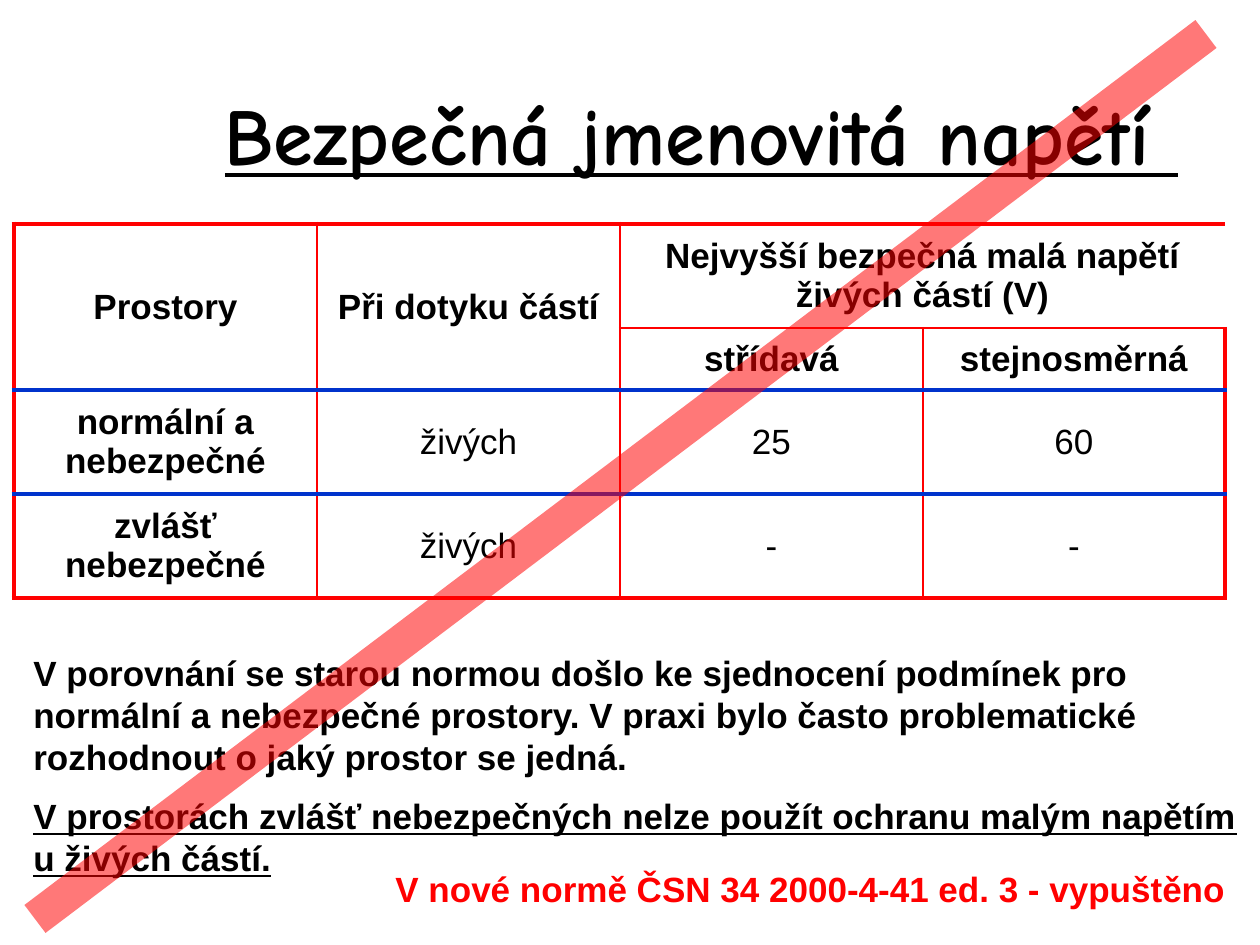
from lxml import etree
from pptx import Presentation
from pptx import util as u
from pptx.dml.color import RGBColor
from pptx.enum import shapes, text
from pptx.oxml import ns

BLACK = RGBColor(0x00, 0x00, 0x00)
WHITE = RGBColor(0xFF, 0xFF, 0xFF)
RED = RGBColor(0xFF, 0x00, 0x00)
BLUE = RGBColor(0x00, 0x33, 0xCC)

SCALE = u.Inches(1) / 126
ROWS = (99, 58, 99, 99)
COLS = (303, 303, 303, 302)
CELLS = (
    ("Prostory", "Při dotyku částí", "Nejvyšší bezpečná malá napětí živých částí (V)", None),
    (None, None, "střídavá", "stejnosměrná"),
    ("normální a nebezpečné", "živých", "25", "60"),
    ("zvlášť nebezpečné", "živých", "-", "-"),
)
NOTE = (
    "V porovnání se starou normou došlo ke sjednocení podmínek pro normální a "
    "nebezpečné prostory. V praxi bylo často problematické rozhodnout o jaký prostor se jedná."
)
BAN = "V prostorách zvlášť nebezpečných nelze použít ochranu malým napětím u živých částí."


def px(*vals):
    return [u.Emu(round(val * SCALE)) for val in vals]


def write(para, words, size=20, font="Arial", color=BLACK, bold=True,
          under=False, align=text.PP_ALIGN.LEFT, lead=None, before=0):
    para.alignment = align
    para.space_before = u.Pt(before)
    if lead:
        para.line_spacing = u.Pt(lead)
    run = para.add_run()
    run.text = words
    run.font.size = u.Pt(size)
    run.font.name = font
    run.font.color.rgb = color
    run.font.bold = bold
    run.font.underline = under


def add_box(slide, box, anchor=text.MSO_ANCHOR.TOP):
    frame = slide.shapes.add_textbox(*px(*box)).text_frame
    frame.word_wrap = True
    frame.vertical_anchor = anchor
    return frame


def pick_rule(side, row, col):
    if side in "TB":
        edge = row + (side == "B")
        if edge in (2, 3):
            return BLUE, 2.25
        inner = edge == 1 and col < 2
    else:
        edge = col + (side == "R")
        inner = edge == 3 and row == 0
    if inner:
        return None
    return RED, 3 if edge in (0, 4) else 1.5


def add_rule(cell, side, rule):
    props = cell._tc.get_or_add_tcPr()
    line = etree.SubElement(props, ns.qn("a:ln" + side))
    if rule is None:
        etree.SubElement(line, ns.qn("a:noFill"))
        return
    color, width = rule
    line.set("w", str(u.Pt(width)))
    fill = etree.SubElement(line, ns.qn("a:solidFill"))
    etree.SubElement(fill, ns.qn("a:srgbClr"), val=str(color))


def add_grid(slide):
    place = px(14, 224, sum(COLS), sum(ROWS))
    table = slide.shapes.add_table(len(ROWS), len(COLS), *place).table
    for row, high in zip(table.rows, px(*ROWS)):
        row.height = high
    for col, wide in zip(table.columns, px(*COLS)):
        col.width = wide
    for col in (0, 1):
        table.cell(0, col).merge(table.cell(1, col))
    table.cell(0, 2).merge(table.cell(0, 3))
    for r, line in enumerate(CELLS):
        for c, words in enumerate(line):
            cell = table.cell(r, c)
            for side in "LRTB":
                add_rule(cell, side, pick_rule(side, r, c))
            cell.fill.solid()
            cell.fill.fore_color.rgb = WHITE
            cell.vertical_anchor = text.MSO_ANCHOR.MIDDLE
            cell.margin_left, cell.margin_right, cell.margin_top, cell.margin_bottom = px(10, 10, 10, 10)
            if words:
                write(cell.text_frame.paragraphs[0], words, bold=r < 2 or c == 0,
                      align=text.PP_ALIGN.CENTER)


def add_strike(slide):
    line = slide.shapes.add_connector(shapes.MSO_CONNECTOR.STRAIGHT, *px(35, 919, 1206, 34))
    line.line.width = u.Pt(20)
    line.line.color.rgb = RED
    tint = line.line._ln.find(".//" + ns.qn("a:srgbClr"))
    etree.SubElement(tint, ns.qn("a:alpha"), val="52000")
    etree.SubElement(line._element.spPr, ns.qn("a:effectLst"))


def add_label(slide):
    label = slide.shapes.add_shape(shapes.MSO_SHAPE.RECTANGLE, *px(383, 861, 873, 55))
    label.shadow.inherit = False
    label.fill.solid()
    label.fill.fore_color.rgb = WHITE
    label.line.fill.background()
    frame = label.text_frame
    frame.word_wrap = True
    frame.vertical_anchor = text.MSO_ANCHOR.TOP
    write(frame.paragraphs[0], "V nové normě ČSN 34 2000-4-41 ed. 3 - vypuštěno",
          color=RED, lead=24)


def main():
    deck = Presentation()
    deck.slide_width, deck.slide_height = px(1260, 945)
    slide = deck.slides.add_slide(deck.slide_layouts[6])
    title = add_box(slide, (174, 73, 1062, 121), text.MSO_ANCHOR.MIDDLE)
    title.margin_left, title.margin_top = px(5, 5)
    write(title.paragraphs[0], "Bezpečná jmenovitá napětí ", size=46, font="Comic Neue",
          under=True, align=text.PP_ALIGN.CENTER)
    add_grid(slide)
    body = add_box(slide, (21, 645, 1235, 246))
    write(body.paragraphs[0], NOTE, lead=24)
    write(body.add_paragraph(), BAN, under=True, lead=24, before=10)
    add_strike(slide)
    add_label(slide)
    deck.save("out.pptx")


if __name__ == "__main__":
    main()
